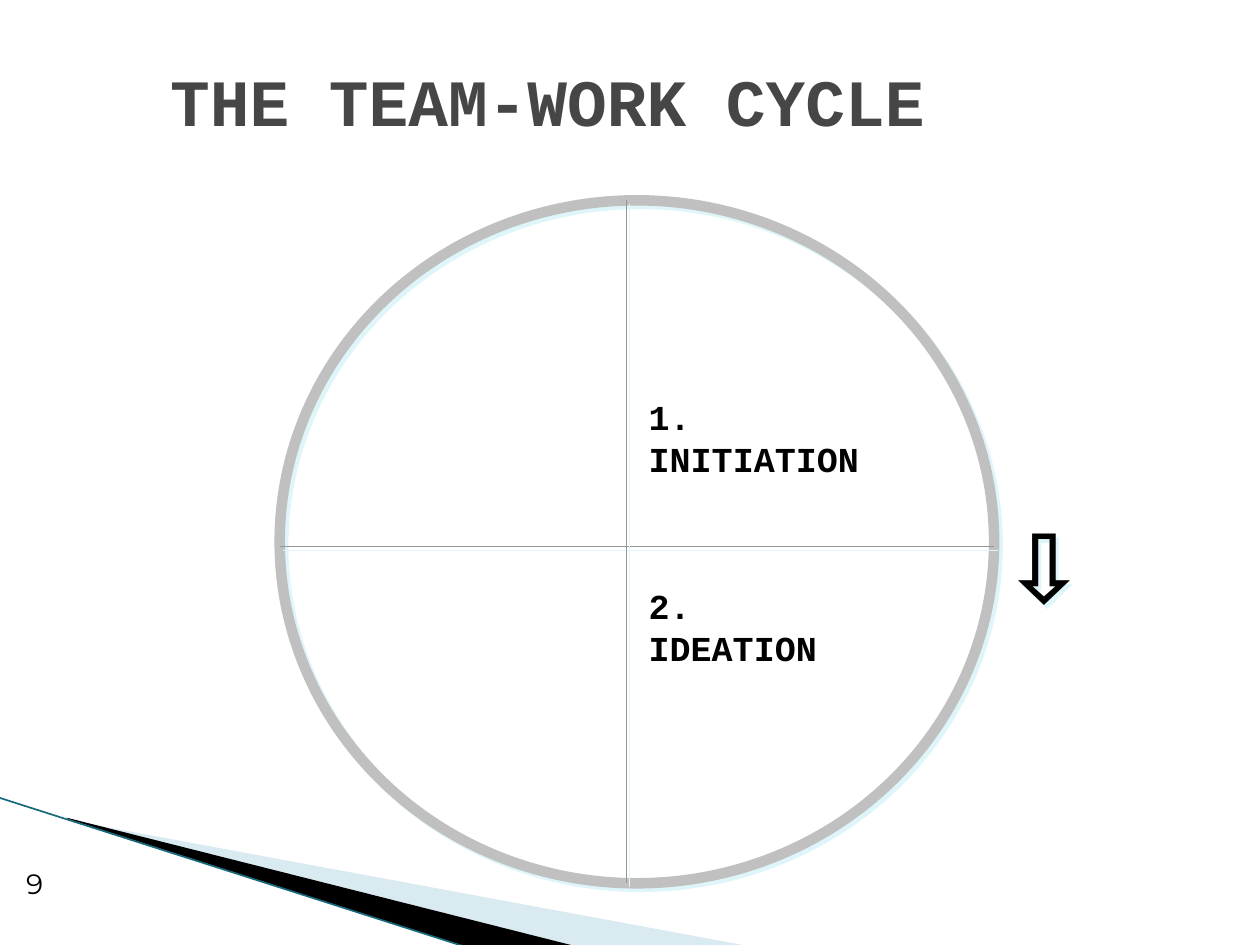
from lxml import etree
from pptx import Presentation
from pptx.dml.color import RGBColor
from pptx.enum.shapes import MSO_CONNECTOR, MSO_SHAPE
from pptx.enum.text import MSO_ANCHOR, MSO_AUTO_SIZE, PP_ALIGN
from pptx.oxml.ns import qn
from pptx.util import Pt

PX = 9144
STRAIGHT = MSO_CONNECTOR.STRAIGHT
OVAL = MSO_SHAPE.OVAL
MIDDLE = MSO_ANCHOR.MIDDLE
NO_AUTOFIT = MSO_AUTO_SIZE.NONE
LEFT = PP_ALIGN.LEFT


def rgb(value):
    return RGBColor.from_string(value)


def emu(*lengths):
    return [length * PX for length in lengths]


class SlideBuilder:
    heading_font = "Courier New"
    number_font = "Montserrat"
    ink = "000000"
    title_ink = "464646"
    shadow_colour = "DEF5FA"

    def __init__(self, prs):
        self.slide = prs.slides.add_slide(prs.slide_layouts[5])
        self.shapes = self.slide.shapes

    def effects(self, sp, shadow=False):
        props = sp._element.spPr
        for old in props.findall(qn("a:effectLst")):
            props.remove(old)
        effects = etree.SubElement(props, qn("a:effectLst"))
        if shadow:
            outer = etree.SubElement(
                effects, qn("a:outerShdw"), dist=str(Pt(2.8)),
                dir="2700000", algn="ctr", rotWithShape="0")
            etree.SubElement(outer, qn("a:srgbClr"), val=self.shadow_colour)

    def style(self, p, size, font, colour, bold):
        p.alignment = LEFT
        p.font.size = Pt(size)
        p.font.name = font
        p.font.bold = bold
        p.font.color.rgb = rgb(colour)

    def title(self, text, x, y, w, h):
        sp = self.shapes.title
        sp.left, sp.top, sp.width, sp.height = emu(x, y, w, h)
        tf = sp.text_frame
        tf.auto_size = NO_AUTOFIT
        tf.vertical_anchor = MIDDLE
        tf.text = text
        self.style(tf.paragraphs[0], 37.8, self.heading_font, self.title_ink, True)

    def text(self, text, x, y, w, h, size=20, font=heading_font, bold=True):
        sp = self.shapes.add_textbox(*emu(x, y, w, h))
        tf = sp.text_frame
        tf.word_wrap = True
        tf.text = text
        self.style(tf.paragraphs[0], size, font, self.ink, bold)
        return sp

    def wedge(self, points, colour, opacity=100):
        builder = self.shapes.build_freeform(*points[0], scale=PX)
        builder.add_line_segments(points[1:], close=True)
        sp = builder.convert_to_shape()
        sp.shadow.inherit = False
        sp.line.fill.background()
        sp.fill.solid()
        sp.fill.fore_color.rgb = rgb(colour)
        if opacity < 100:
            clr = sp._element.spPr.find(qn("a:solidFill")).find(qn("a:srgbClr"))
            etree.SubElement(clr, qn("a:alpha"), val=str(opacity * 1000))

    def line(self, x1, y1, x2, y2, colour, width, shadow=False):
        sp = self.shapes.add_connector(STRAIGHT, *emu(x1, y1, x2, y2))
        sp.line.color.rgb = rgb(colour)
        sp.line.width = Pt(width)
        self.effects(sp, shadow)

    def ring(self, x, y, w, h, colour, width):
        sp = self.shapes.add_shape(OVAL, *emu(x, y, w, h))
        sp.fill.background()
        sp.line.color.rgb = rgb(colour)
        sp.line.width = Pt(width)
        self.effects(sp, shadow=True)


def main():
    prs = Presentation()
    prs.slide_width, prs.slide_height = emu(1000, 750)
    s = SlideBuilder(prs)

    s.wedge([(55, 651), (595, 751), (456, 751), (55, 650)], "A0CBDC", 40)
    s.wedge([(53, 649), (457, 751), (372, 752), (54, 650)], "000000")
    s.line(-1, 633, 371, 752, "16697A", 0.95)

    s.title("THE TEAM-WORK CYCLE", 125, 47, 797, 64)

    left, top, width, height = 222, 159, 567, 542
    s.ring(left, top, width, height, "C0C0C0", 6)
    s.line(left, 434, left + width, 434, "969696", 0.75, shadow=True)
    s.line(497, top, 497, top + height, "969696", 0.75, shadow=True)

    s.text("1. \vINITIATION", 505, 309, 275, 77)
    s.text("2. \vIDEATION", 505, 459, 233, 77)
    arrow = s.text("⇩", 789, 376, 100, 130, size=72)
    s.effects(arrow, shadow=True)
    s.text("9", 11, 683, 54, 50, size=16, font=s.number_font, bold=False)

    prs.save("out.pptx")


if __name__ == "__main__":
    main()
